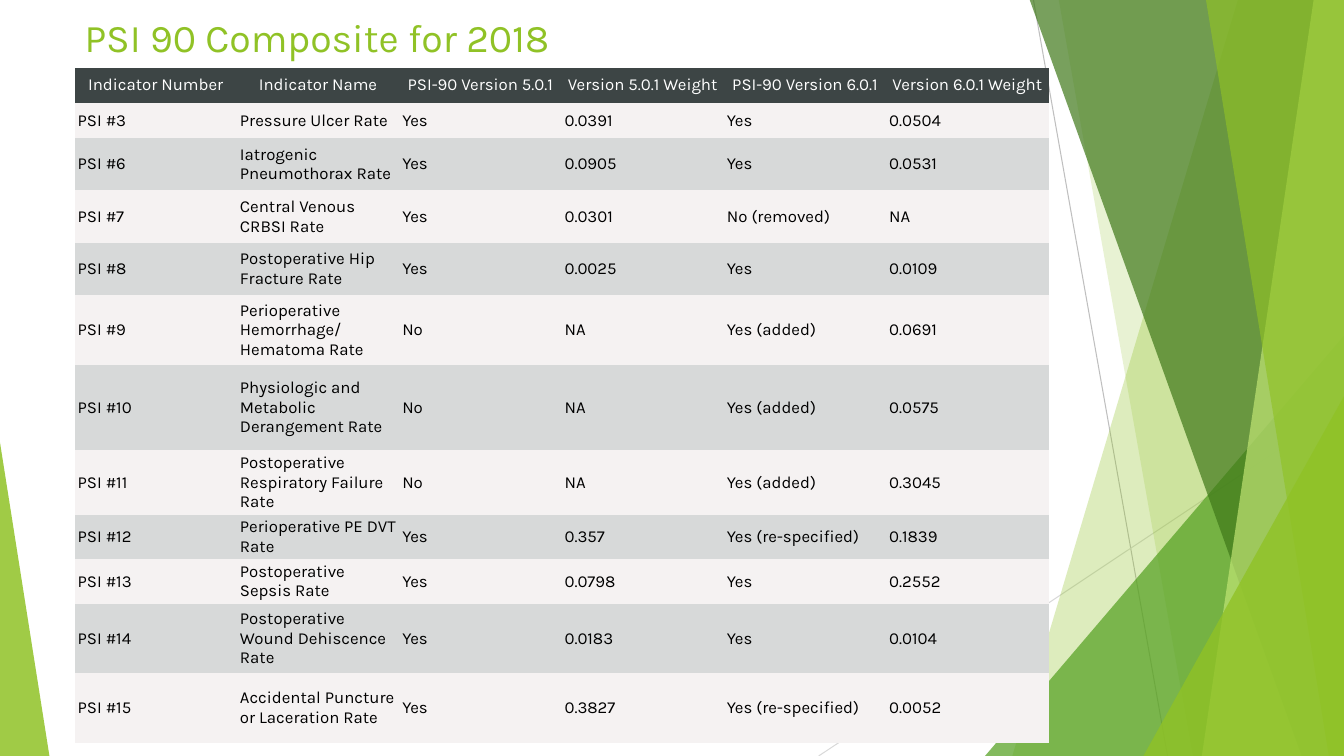
"""Build the PSI 90 Composite slide with its indicator table and green facets."""
from dataclasses import dataclass

from lxml import etree
from pptx import Presentation
from pptx.dml.color import RGBColor
from pptx.enum.shapes import MSO_CONNECTOR as Connector, MSO_SHAPE as Shape
from pptx.enum.text import MSO_ANCHOR as Anchor, PP_ALIGN as Align
from pptx.oxml.ns import qn
from pptx.util import Inches, Pt


@dataclass(frozen=True)
class Theme:
    font: str = "Karla"
    title_size: int = 28
    table_size: int = 12
    lime: str = "90C226"
    pale_lime: str = "C0E474"
    green: str = "54A021"
    dark_green: str = "3F7819"
    light_grey: str = "D9D9D9"
    mid_grey: str = "BFBFBF"
    header: str = "3D4545"
    odd_row: str = "F5F2F2"
    even_row: str = "D7D9D9"
    black: str = "000000"
    white: str = "FFFFFF"


def paint(shape, color, opacity):
    """Give a shape a translucent fill with no outline or shadow."""
    shape.shadow.inherit = False
    shape.line.fill.background()
    shape.fill.solid()
    shape.fill.fore_color.rgb = RGBColor.from_string(color)
    tint = shape.fill._xPr.find(qn("a:solidFill"))[0]
    etree.SubElement(tint, qn("a:alpha"), val=str(opacity * 1000))


def style(paragraph, size, color, align=Align.LEFT):
    """Set the font, size, colour and alignment of a paragraph."""
    paragraph.alignment = align
    paragraph.font.name = theme.font
    paragraph.font.size = Pt(size)
    paragraph.font.color.rgb = RGBColor.from_string(color)


theme = Theme()
deck = Presentation()
deck.slide_width, deck.slide_height = Inches(13.33), Inches(7.5)
page = deck.slides.add_slide(deck.slide_layouts[6])
shapes = page.shapes
right, top, bottom = 13.33, -0.01, 7.5

hairlines = [
    (10.25, 0, 11.58, bottom, theme.mid_grey),
    (right, 4.03, 8.12, bottom, theme.light_grey),
]
for x1, y1, x2, y2, color in hairlines:
    hairline = shapes.add_connector(
        Connector.STRAIGHT, Inches(x1), Inches(y1), Inches(x2), Inches(y2))
    hairline.line.color.rgb = RGBColor.from_string(color)
    hairline.line.width = Pt(0.75)
    etree.SubElement(hairline._element.spPr, qn("a:effectLst"))

FACET, TRIANGLE = "facet", "triangle"
panels = [
    (FACET, 12.28, 10.04, theme.lime, 30),
    (FACET, 10.5, 11.83, theme.lime, 20),
    (TRIANGLE, 9.77, 3.33, theme.green, 72),
    (FACET, 10.21, 12.91, theme.dark_green, 70),
    (FACET, 13.03, 11.92, theme.pale_lime, 70),
    (FACET, 11.96, 13.18, theme.lime, 65),
    (TRIANGLE, 11.34, 3.93, theme.lime, 80),
    (TRIANGLE, 0, 4.39, theme.lime, 85),
]
for kind, first, second, color, opacity in panels:
    if kind == FACET:
        outline = shapes.build_freeform(Inches(first), Inches(top))
        corners = [(right, top), (right, bottom), (second, bottom)]
        outline.add_line_segments([(Inches(x), Inches(y)) for x, y in corners])
        panel = outline.convert_to_shape()
    else:
        width = right - first if first else 0.49
        panel = shapes.add_shape(
            Shape.ISOSCELES_TRIANGLE, Inches(first), Inches(second),
            Inches(width), Inches(bottom - second))
        panel.adjustments[0] = 1 if first else 0
    paint(panel, color, opacity)

title = shapes.add_textbox(Inches(0.74), Inches(0.08), Inches(9.4), Inches(0.74))
title.text_frame.word_wrap = True
title.text_frame.vertical_anchor = Anchor.TOP
title.text_frame.text = "PSI 90 Composite for 2018"
style(title.text_frame.paragraphs[0], theme.title_size, theme.lime)

records = [
    (0.35, "Indicator Number", "Indicator Name", "PSI-90 Version 5.0.1",
     "Version 5.0.1 Weight", "PSI-90 Version 6.0.1", "Version 6.0.1 Weight"),
    (0.35, "PSI #3", "Pressure Ulcer Rate", "Yes", "0.0391", "Yes", "0.0504"),
    (0.52, "PSI #6", "Iatrogenic Pneumothorax Rate", "Yes", "0.0905", "Yes", "0.0531"),
    (0.52, "PSI #7", "Central Venous CRBSI Rate", "Yes", "0.0301", "No (removed)", "NA"),
    (0.52, "PSI #8", "Postoperative Hip Fracture Rate", "Yes", "0.0025", "Yes", "0.0109"),
    (0.69, "PSI #9", "Perioperative Hemorrhage/ Hematoma Rate", "No", "NA",
     "Yes (added)", "0.0691"),
    (0.85, "PSI #10", "Physiologic and Metabolic Derangement Rate", "No", "NA",
     "Yes (added)", "0.0575"),
    (0.52, "PSI #11", "Postoperative Respiratory Failure Rate", "No", "NA",
     "Yes (added)", "0.3045"),
    (0.35, "PSI #12", "Perioperative PE DVT Rate", "Yes", "0.357",
     "Yes (re-specified)", "0.1839"),
    (0.35, "PSI #13", "Postoperative Sepsis Rate", "Yes", "0.0798", "Yes", "0.2552"),
    (0.69, "PSI #14", "Postoperative Wound Dehiscence Rate", "Yes", "0.0183",
     "Yes", "0.0104"),
    (0.69, "PSI #15", "Accidental Puncture or Laceration Rate", "Yes", "0.3827",
     "Yes (re-specified)", "0.0052"),
]
frame = shapes.add_table(
    len(records), 6, Inches(0.74), Inches(0.67), Inches(9.66), Inches(6.68))
table = frame.table
table.horz_banding = False
plain_style = "{2D5ABB26-0587-4C30-8999-92F81FD0307C}"
table._tbl.tblPr.find(qn("a:tableStyleId")).text = plain_style

for row, (height, *texts) in enumerate(records):
    table.rows[row].height = Inches(height)
    if row == 0:
        fill, ink, align = theme.header, theme.white, Align.CENTER
    else:
        fill = theme.odd_row if row % 2 else theme.even_row
        ink, align = theme.black, Align.LEFT
    for column, text in enumerate(texts):
        cell = table.cell(row, column)
        cell.text = text
        cell.vertical_anchor = Anchor.MIDDLE
        cell.margin_left = cell.margin_right = Inches(0.03)
        cell.margin_top = cell.margin_bottom = Inches(0.02)
        cell.fill.solid()
        cell.fill.fore_color.rgb = RGBColor.from_string(fill)
        style(cell.text_frame.paragraphs[0], theme.table_size, ink, align)

deck.save("out.pptx")
